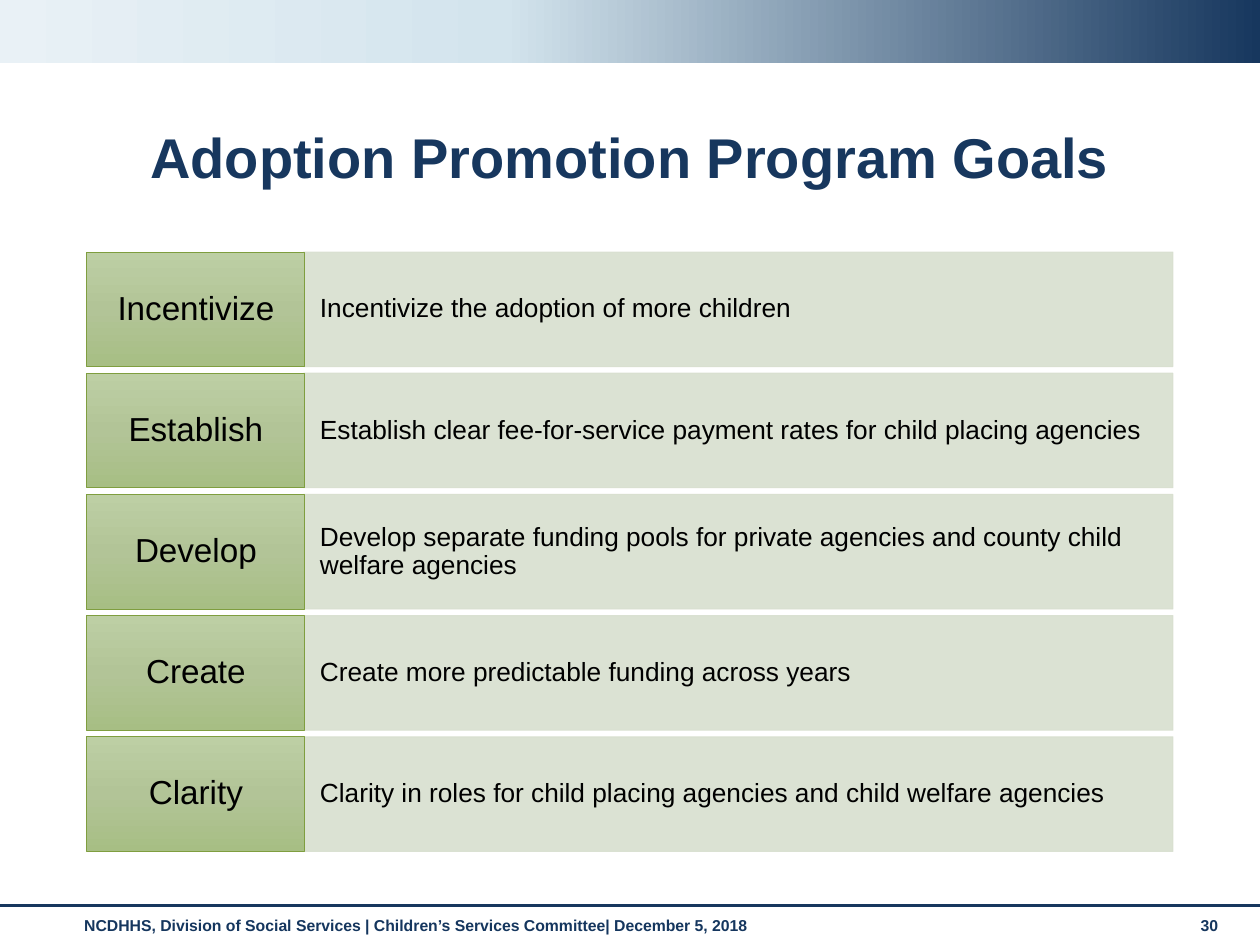
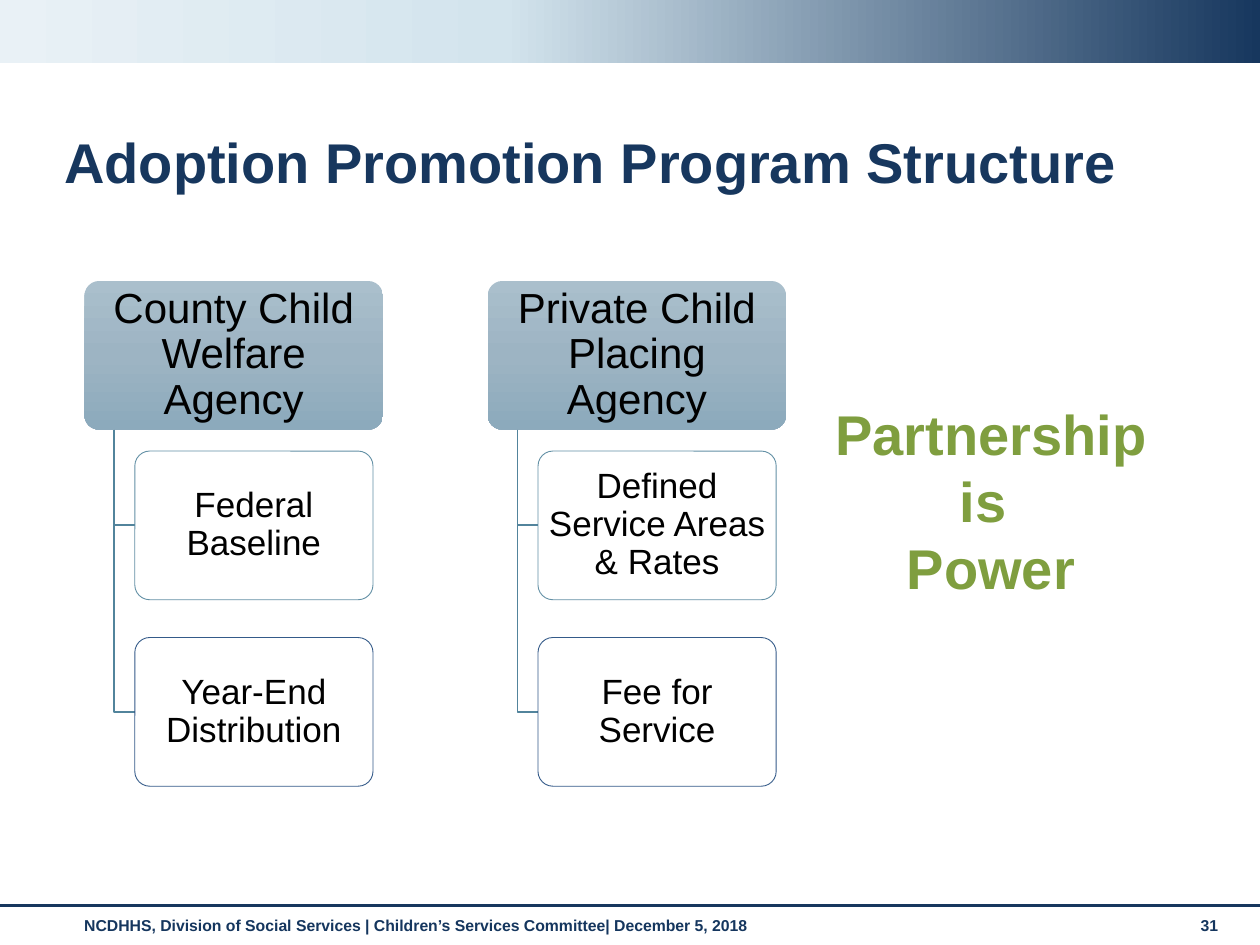
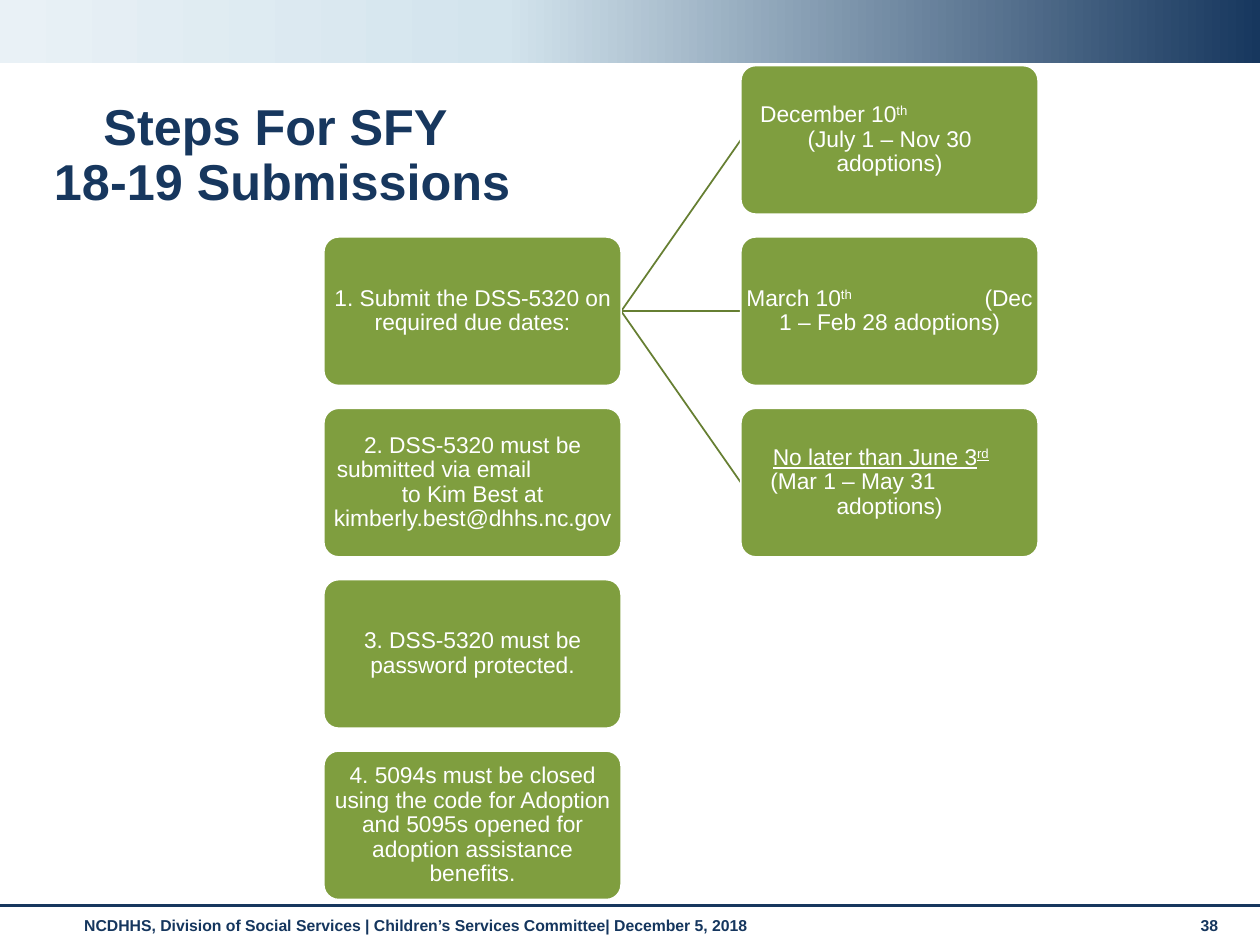
from dataclasses import dataclass
from typing import NamedTuple, Optional

from lxml.etree import SubElement
from pptx import Presentation
from pptx.dml.color import RGBColor
from pptx.enum.shapes import MSO_CONNECTOR, MSO_SHAPE
from pptx.enum.text import MSO_ANCHOR, MSO_AUTO_SIZE, PP_ALIGN
from pptx.oxml.ns import qn
from pptx.util import Inches, Pt


@dataclass(frozen=True)
class Theme:
    font: str = "Arial"
    navy: str = "17375E"
    footer: str = "15365E"
    black: str = "000000"
    white: str = "FFFFFF"
    green: str = "7F9E3F"
    dark_green: str = "667F32"
    pale_green: str = "D8DFCF"
    teal: str = "52849C"
    blue: str = "1F497D"
    band: tuple = ((0, "17375E"), (60, "D3E4ED"), (100, "E9F1F6"))
    green_fade: tuple = ((0, "BDCFA4"), (50, "B2C497"), (100, "A7BE84"))
    blue_fade: tuple = ((0, "AABFCC"), (50, "9DB4C3"), (100, "8CAABC"))
    title_size: float = 32
    small_title_size: float = 28.8
    footer_size: float = 9
    label_size: float = 19
    detail_size: float = 15
    head_size: float = 24
    child_size: float = 20
    step_size: float = 13


T = Theme()


class Box(NamedTuple):
    x: float
    y: float
    w: float
    h: float

    def emu(self) -> list:
        return [Inches(v) for v in self]


@dataclass(frozen=True)
class Grid:
    x: float
    y: float
    w: float
    h: float
    col_step: float = 0
    row_step: float = 0

    def cell(self, col: int, row: int) -> Box:
        return Box(self.x + col * self.col_step, self.y + row * self.row_step, self.w, self.h)


class Run(NamedTuple):
    text: str
    raised: bool = False
    underline: bool = False


class Line(NamedTuple):
    runs: tuple
    indent: Optional[float] = None
    tab: Optional[float] = None


class Look(NamedTuple):
    fill: object
    line: Optional[str] = None
    width: float = 0.5
    alpha: int = 100
    angle: int = 90


class Agency(NamedTuple):
    name: str
    children: tuple


class Step(NamedTuple):
    col: int
    row: int
    lines: tuple


LABEL = Look(T.green_fade, T.green)
DETAIL = Look(T.pale_green, T.pale_green, alpha=90)
HEAD = Look(T.blue_fade)
CHILDREN = (Look(T.white, T.teal, alpha=90), Look(T.white, T.blue, alpha=90))
STEP = Look(T.green, T.white, 1)

FOOTER = "NCDHHS, Division of Social Services | Children’s Services Committee| December 5, 2018"

GOALS = (
    ("Incentivize", "Incentivize the adoption of more children"),
    ("Establish", "Establish clear fee-for-service payment rates for child placing agencies"),
    ("Develop", "Develop separate funding pools for private agencies and county child welfare agencies"),
    ("Create", "Create more predictable funding across years"),
    ("Clarity", "Clarity in roles for child placing agencies and child welfare agencies"),
)

AGENCIES = (
    Agency("County Child Welfare Agency", ("Federal Baseline", "Year-End Distribution")),
    Agency("Private Child Placing Agency", ("Defined Service Areas & Rates", "Fee for Service")),
)


def plain(*texts: str) -> tuple:
    return tuple(Line((Run(text),)) for text in texts)


SUBMIT = Step(0, 1, plain("1. Submit the DSS-5320 on required due dates:"))
DUE_DATES = (
    Step(1, 0, (Line((Run("December 10"), Run("th", True)), 0.11),
                *plain("(July 1 – Nov 30", "adoptions)"))),
    Step(1, 1, (Line((Run("March 10"), Run("th", True), Run("\t(Dec")), 0, 1.89),
                *plain("1 – Feb 28 adoptions)"))),
    Step(1, 2, (Line((Run("No later than June 3", underline=True), Run("rd", True, True)), 0.21),
                Line((Run("(Mar 1 – May 31"),), 0.19),
                *plain("adoptions)"))),
)
LATER_STEPS = (
    Step(0, 2, (*plain("2. DSS-5320 must be"),
                Line((Run("submitted via email"),), 0.06),
                *plain("to Kim Best at", "kimberly.best@dhhs.nc.gov"))),
    Step(0, 3, plain("3. DSS-5320 must be password protected.")),
    Step(0, 4, plain("4. 5094s must be closed using the code for Adoption and 5095s "
                     "opened for adoption assistance benefits.")),
)


def apply(target, values: dict) -> None:
    for name, value in values.items():
        setattr(target, name, value)


def rgb(color: str) -> RGBColor:
    return RGBColor.from_string(color)


def style_font(font, size: float, color: str, bold: bool = False) -> None:
    apply(font, {"name": T.font, "size": Pt(size), "bold": bold})
    font.color.rgb = rgb(color)


def write(tf, lines: tuple, size: float, color: str, align=PP_ALIGN.CENTER,
          bold: bool = False, spacing: float = 0.9) -> None:
    for i, line in enumerate(lines):
        p = tf.paragraphs[0] if i == 0 else tf.add_paragraph()
        apply(p, {"alignment": align, "line_spacing": spacing})
        if line.indent is not None:
            p.alignment = PP_ALIGN.LEFT
            p._p.get_or_add_pPr().set("marL", str(Inches(line.indent)))
        if line.tab is not None:
            tabs = SubElement(p._p.get_or_add_pPr(), qn("a:tabLst"))
            SubElement(tabs, qn("a:tab"), pos=str(Inches(line.tab)), algn="l")
        for run in line.runs:
            r = p.add_run()
            r.text = run.text
            style_font(r.font, size, color, bold)
            if run.underline:
                r.font.underline = True
            if run.raised:
                r._r.get_or_add_rPr().set("baseline", "30000")


def set_insets(tf, x: float, y: float) -> None:
    apply(tf, {"margin_left": Inches(x), "margin_right": Inches(x),
               "margin_top": Inches(y), "margin_bottom": Inches(y),
               "word_wrap": True, "vertical_anchor": MSO_ANCHOR.MIDDLE})


def fade(sp, stops: tuple, angle: int) -> None:
    sp.fill.gradient()
    grad = sp.element.spPr.find(qn("a:gradFill"))
    for child in list(grad):
        grad.remove(child)
    stop_list = SubElement(grad, qn("a:gsLst"))
    for pos, color in stops:
        stop = SubElement(stop_list, qn("a:gs"), pos=str(pos * 1000))
        SubElement(stop, qn("a:srgbClr"), val=color)
    SubElement(grad, qn("a:lin"), ang=str(angle * 60000), scaled="0")


def add_block(slide, kind, box: Box, look: Look):
    sp = slide.shapes.add_shape(kind, *box.emu())
    sp.shadow.inherit = False
    if kind == MSO_SHAPE.ROUNDED_RECTANGLE:
        sp.adjustments[0] = 0.1
    if isinstance(look.fill, tuple):
        fade(sp, look.fill, look.angle)
    else:
        sp.fill.solid()
        sp.fill.fore_color.rgb = rgb(look.fill)
    if look.line:
        sp.line.color.rgb = rgb(look.line)
        sp.line.width = Pt(look.width)
    else:
        sp.line.fill.background()
    if look.alpha < 100:
        for color in sp.element.spPr.iter(qn("a:srgbClr")):
            SubElement(color, qn("a:alpha"), val=str(look.alpha * 1000))
    return sp


def add_card(slide, kind, box: Box, look: Look, lines: tuple, size: float,
             insets: tuple, color: str = T.black, align=PP_ALIGN.CENTER) -> None:
    sp = add_block(slide, kind, box, look)
    set_insets(sp.text_frame, *insets)
    write(sp.text_frame, lines, size, color, align)


def add_line(slide, start: tuple, end: tuple, color: str, width: float):
    cx = slide.shapes.add_connector(MSO_CONNECTOR.STRAIGHT,
                                    *(Inches(v) for v in start + end))
    cx.line.color.rgb = rgb(color)
    cx.line.width = Pt(width)
    SubElement(cx.element.spPr, qn("a:effectLst"))
    return cx


def add_elbow(slide, start: tuple, end: tuple) -> None:
    (x1, y1), (x2, y2) = start, end
    builder = slide.shapes.build_freeform(Inches(x1), Inches(y1))
    builder.add_line_segments([(Inches(x1), Inches(y2)), (Inches(x2), Inches(y2))], close=False)
    sp = builder.convert_to_shape()
    sp.shadow.inherit = False
    sp.fill.background()
    sp.line.color.rgb = rgb(T.teal)
    sp.line.width = Pt(1)


def add_text(slide, box: Box, lines: tuple, size: float, color: str,
             align=PP_ALIGN.LEFT, wrap: bool = True):
    sp = slide.shapes.add_textbox(*box.emu())
    sp.text_frame.word_wrap = wrap
    write(sp.text_frame, lines, size, color, align, bold=True, spacing=1.0)
    return sp


def decorate_master(prs, slide) -> None:
    parts = (
        add_text(slide, Box(0.57, 7.22, 8.74, 0.29), plain(FOOTER), T.footer_size, T.footer),
        add_block(slide, MSO_SHAPE.RECTANGLE, Box(0, 0, 10, 0.5), Look(T.band, angle=180)),
        add_line(slide, (0, 7.19), (10, 7.19), T.navy, 1.75),
    )
    for number, part in enumerate(parts, 100):
        part.element.xpath(".//p:cNvPr")[0].set("id", str(number))
        prs.slide_master.shapes.element.append(part.element)


def add_slide(prs, number: int, title: str, box: Box,
              size: float = T.title_size, align=PP_ALIGN.CENTER):
    slide = prs.slides.add_slide(prs.slide_layouts.get_by_name("Title Only"))
    sp = slide.shapes.title
    apply(sp, dict(zip(("left", "top", "width", "height"), box.emu())))
    tf = sp.text_frame
    apply(tf, {"auto_size": MSO_AUTO_SIZE.NONE, "vertical_anchor": MSO_ANCHOR.MIDDLE})
    p = tf.paragraphs[0]
    p.text = title
    apply(p, {"alignment": align, "line_spacing": 0.9})
    for r in p.runs:
        style_font(r.font, size, T.navy, True)
    add_text(slide, Box(9.43, 7.22, 0.44, 0.3), plain(str(number)), T.footer_size, T.footer)
    return slide


def build_goals(prs):
    slide = add_slide(prs, 30, "Adoption Promotion Program Goals", Box(0.69, 0.55, 8.62, 1.45))
    labels = Grid(0.69, 2, 1.73, 0.91, row_step=0.962)
    details = Grid(2.41, 2, 6.9, 0.91, row_step=0.962)
    for row, (label, detail) in enumerate(GOALS):
        add_card(slide, MSO_SHAPE.RECTANGLE, details.cell(0, row), DETAIL, plain(detail),
                 T.detail_size, (0.13, 0.23), align=PP_ALIGN.LEFT)
        add_card(slide, MSO_SHAPE.RECTANGLE, labels.cell(0, row), LABEL, plain(label),
                 T.label_size, (0.09, 0.09))
    return slide


def build_structure(prs) -> None:
    slide = add_slide(prs, 31, "Adoption Promotion Program Structure",
                      Box(0.41, 0.83, 8.89, 0.96), align=PP_ALIGN.LEFT)
    heads = Grid(0.67, 2.23, 2.37, 1.18, col_step=3.2)
    children = Grid(1.07, 3.58, 1.89, 1.18, 3.2, 1.48)
    for col, agency in enumerate(AGENCIES):
        head = heads.cell(col, 0)
        add_card(slide, MSO_SHAPE.ROUNDED_RECTANGLE, head, HEAD, plain(agency.name),
                 T.head_size, (0.05, 0.03))
        for row, (child, look) in enumerate(zip(agency.children, CHILDREN)):
            box = children.cell(col, row)
            add_elbow(slide, (head.x + head.w / 10, head.y + head.h), (box.x, box.y + box.h / 2))
            add_card(slide, MSO_SHAPE.ROUNDED_RECTANGLE, box, look, plain(child),
                     T.child_size, (0.04, 0.03))
    add_text(slide, Box(6.52, 3.12, 2.69, 1.72), plain("Partnership", "is ", "Power"),
             T.title_size, T.green, PP_ALIGN.CENTER, wrap=False)


def build_steps(prs) -> None:
    slide = add_slide(prs, 38, "Steps For SFY \v18-19 Submissions",
                      Box(0.14, 0.52, 4.2, 1.45), T.small_title_size)
    grid = Grid(2.57, 0.52, 2.36, 1.18, 3.31, 1.36)
    source = grid.cell(SUBMIT.col, SUBMIT.row)
    for due in DUE_DATES:
        box = grid.cell(due.col, due.row)
        add_line(slide, (source.x + source.w, source.y + source.h / 2),
                 (box.x, box.y + box.h / 2), T.dark_green, 1)
    for step in (SUBMIT, *DUE_DATES, *LATER_STEPS):
        add_card(slide, MSO_SHAPE.ROUNDED_RECTANGLE, grid.cell(step.col, step.row), STEP,
                 step.lines, T.step_size, (0.01, 0.01), T.white)


def main() -> None:
    prs = Presentation()
    apply(prs, {"slide_width": Inches(10), "slide_height": Inches(7.5)})
    goals = build_goals(prs)
    decorate_master(prs, goals)
    build_structure(prs)
    build_steps(prs)
    prs.save("out.pptx")


if __name__ == "__main__":
    main()
